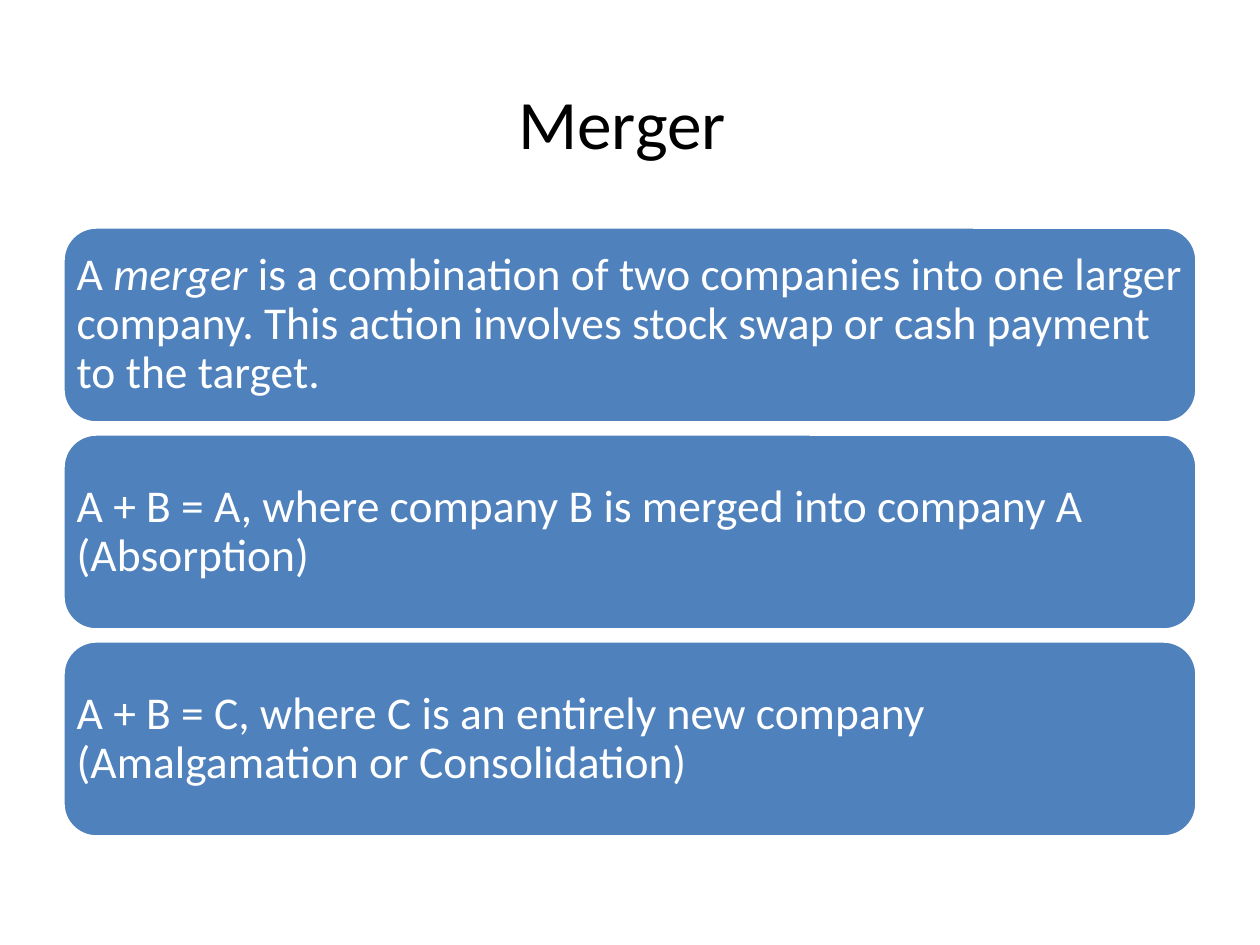
"""Build the Merger slide: a title above three stacked rounded panels."""
from pptx import Presentation
from pptx.dml.color import RGBColor
from pptx.enum.shapes import MSO_SHAPE as SHAPE
from pptx.enum.text import MSO_ANCHOR as ANCHOR, PP_ALIGN as ALIGN
from pptx.util import Pt

PX = 914400 // 126
BLACK = RGBColor(0x00, 0x00, 0x00)
WHITE = RGBColor(0xFF, 0xFF, 0xFF)
BLUE = RGBColor(0x4F, 0x81, 0xBD)

TITLE = [("Merger ", False)]
PANELS = [
    [("A ", False), ("merger ", True),
     ("is a combination of two companies into one larger company. "
      "This action involves stock swap or cash payment to the target.", False)],
    [("A + B = A, where company B is merged into company A (Absorption)", False)],
    [("A + B = C, where C is an entirely new company "
      "(Amalgamation or Consolidation)", False)],
]
LEFT, WIDTH = 63, 1134
TITLE_TOP, TITLE_H = 38, 157
PANEL_TOP, PANEL_H, PANEL_PITCH = 227, 196, 207


def px(*values):
    return [v * PX for v in values]


def write(sp, runs, size, color, align, insets, spacing=1.0):
    tf = sp.text_frame
    tf.word_wrap = True
    tf.vertical_anchor = ANCHOR.MIDDLE
    tf.margin_left, tf.margin_top, tf.margin_right, tf.margin_bottom = px(*insets)
    p = tf.paragraphs[0]
    p.alignment = align
    p.line_spacing = spacing
    for text, italic in runs:
        r = p.add_run()
        r.text = text
        r.font.name = "Calibri"
        r.font.size = Pt(size)
        r.font.italic = italic
        r.font.color.rgb = color


def add_panel(s, top, runs):
    sp = s.shapes.add_shape(SHAPE.ROUNDED_RECTANGLE, *px(LEFT, top, WIDTH, PANEL_H))
    sp.adjustments[0] = 0.17
    sp.shadow.inherit = False
    sp.fill.solid()
    sp.fill.fore_color.rgb = BLUE
    sp.line.color.rgb = WHITE
    sp.line.width = Pt(2)
    write(sp, runs, 26, WHITE, ALIGN.LEFT, (4, 4, 4, 4), spacing=0.9)


def main():
    prs = Presentation()
    prs.slide_width, prs.slide_height = px(1260, 945)
    s = prs.slides.add_slide(prs.slide_layouts[6])
    title = s.shapes.add_textbox(*px(LEFT, TITLE_TOP, WIDTH, TITLE_H))
    write(title, TITLE, 39.6, BLACK, ALIGN.CENTER, (13, 16, 13, 6))
    for i, runs in enumerate(PANELS):
        add_panel(s, PANEL_TOP + i * PANEL_PITCH, runs)
    prs.save("out.pptx")


if __name__ == "__main__":
    main()
